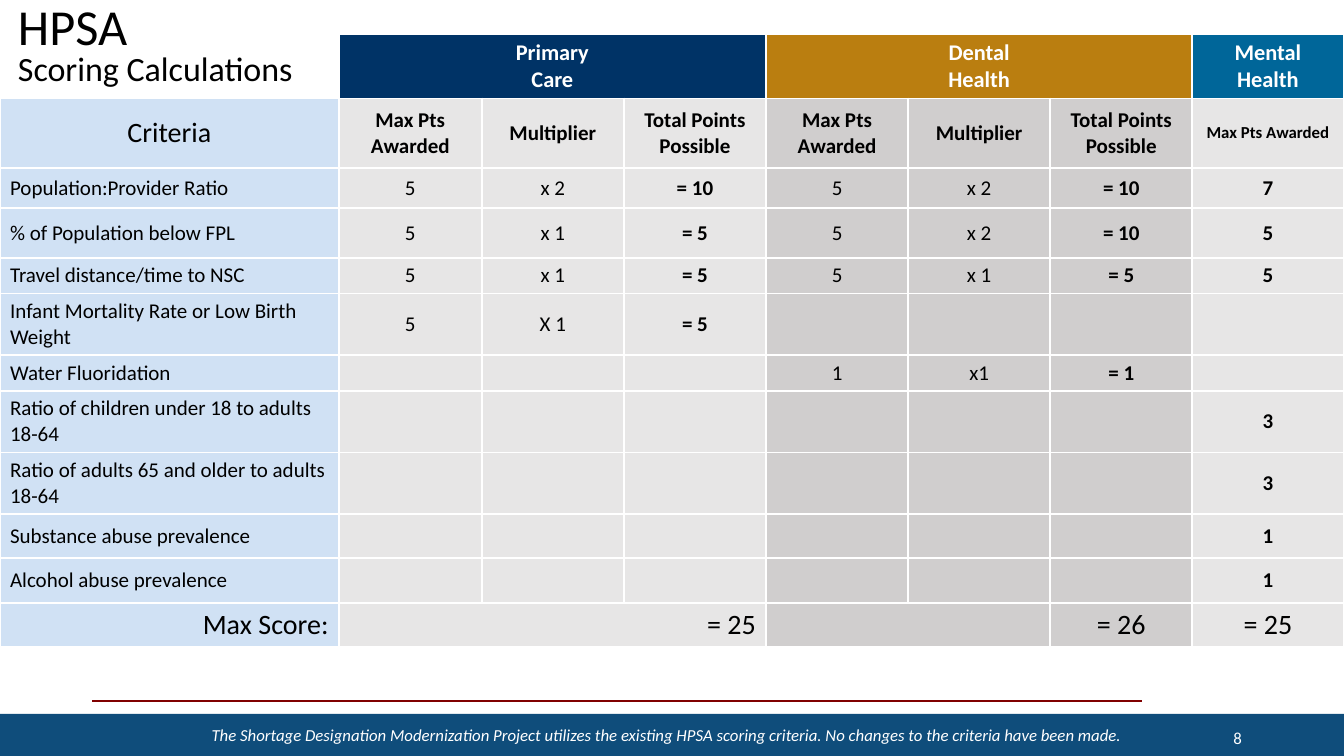
from dataclasses import dataclass

from lxml.etree import SubElement
from pptx import Presentation
from pptx.dml.color import RGBColor
from pptx.enum.shapes import MSO_CONNECTOR, MSO_SHAPE
from pptx.enum.text import MSO_ANCHOR, PP_ALIGN
from pptx.oxml import parse_xml
from pptx.oxml.ns import nsdecls, qn
from pptx.slide import Slide
from pptx.table import Table, _Cell
from pptx.text.text import _Run
from pptx.util import Inches, Pt


@dataclass(frozen=True)
class Theme:
    font: str = "Calibri"
    white: str = "FFFFFF"
    black: str = "000000"
    primary: str = "003366"
    dental: str = "BA7E10"
    mental: str = "006699"
    criteria: str = "D0E1F4"
    light: str = "E7E6E6"
    dark: str = "D0CECE"
    band: str = "0F4D7B"
    rule: str = "800000"
    title: float = 36
    subtitle: float = 24.3
    large: float = 20
    group: float = 16
    body: float = 15
    small: float = 12
    line: float = 1.5


@dataclass(frozen=True)
class Row:
    height: float
    texts: tuple[str, ...]
    size: float
    bold: tuple[int, ...] = ()


@dataclass(frozen=True)
class Label:
    left: float
    top: float
    width: float
    height: float
    text: str
    sizes: tuple[float, ...]
    color: str
    align: PP_ALIGN = PP_ALIGN.LEFT
    anchor: MSO_ANCHOR = MSO_ANCHOR.TOP
    italic: bool = False
    spacing: float = 1.0


T = Theme()
COLUMNS, ROWS = 160, 90  # slide grid, twelve units to the inch
TABLE_TOP = 4
WIDTHS = (40.32, 17.04, *[16.92] * 5, 18)
TOTALS = (3, 6, 7)
COLUMN_FILLS = (T.criteria, *[T.light] * 3, *[T.dark] * 3, T.light)
GROUP_FILLS = (T.white, *[T.primary] * 3, *[T.dental] * 3, T.mental)
SUBHEADS = ("Max Pts Awarded", "Multiplier", "Total Points Possible")
NONE = ("", "", "")


def criterion(height: float, name: str, primary: tuple[str, ...] = NONE,
              dental: tuple[str, ...] = NONE, mental: str = "") -> Row:
    return Row(height, (name, *primary, *dental, mental), T.body, TOTALS)


TABLE_ROWS = (
    Row(7.56, ("", "Primary\nCare", "", "", "Dental\nHealth", "", "", "Mental Health"),
        T.group, tuple(range(8))),
    Row(8.28, ("Criteria", *SUBHEADS, *SUBHEADS, SUBHEADS[0]), T.body, tuple(range(1, 8))),
    criterion(4.8, "Population:Provider Ratio", ("5", "x 2", "= 10"), ("5", "x 2", "= 10"), "7"),
    criterion(5.88, "% of Population below FPL", ("5", "x 1", "= 5"), ("5", "x 2", "= 10"), "5"),
    criterion(4.26, "Travel distance/time to NSC", ("5", "x 1", "= 5"), ("5", "x 1", "= 5"), "5"),
    criterion(7.32, "Infant Mortality Rate or Low Birth Weight", ("5", "X 1", "= 5")),
    criterion(4.26, "Water Fluoridation", dental=("1", "x1", "= 1")),
    criterion(7.32, "Ratio of children under 18 to adults 18-64", mental="3"),
    criterion(7.32, "Ratio of adults 65 and older to adults 18-64", mental="3"),
    criterion(5.28, "Substance abuse prevalence", mental="1"),
    criterion(5.28, "Alcohol abuse prevalence", mental="1"),
    Row(5.28, ("Max Score:", "= 25", "", "", "", "", "= 26", "= 25"), T.large),
)
LAST = len(TABLE_ROWS) - 1
MERGES = ((0, 1, 3), (0, 4, 6), (LAST, 1, 3), (LAST, 4, 5))  # row, first and last column

LABELS = (
    Label(0.96, 0.24, 41.04, 10.8, "HPSA\vScoring Calculations",
          (T.title, T.subtitle), T.black, spacing=0.8),
    Label(24, 85.68, 112, 4.32,
          "The Shortage Designation Modernization Project utilizes the existing HPSA "
          "scoring criteria. No changes to the criteria have been made.",
          (T.small,), T.white, italic=True),
    Label(113.04, 85.68, 36, 4.32, "8", (T.small,), T.white,
          PP_ALIGN.RIGHT, MSO_ANCHOR.MIDDLE),
)


def grid(units: float) -> int:
    return Inches(units / 12)


def rgb(color: str) -> RGBColor:
    return RGBColor.from_string(color)


def style_run(r: _Run, size: float, color: str, bold: bool = False, italic: bool = False) -> None:
    r.font.name, r.font.size = T.font, Pt(size)
    r.font.bold, r.font.italic = bold, italic
    r.font.color.rgb = rgb(color)


def add_label(s: Slide, label: Label) -> None:
    box = s.shapes.add_textbox(*map(grid, (label.left, label.top, label.width, label.height)))
    tf = box.text_frame
    tf.word_wrap, tf.vertical_anchor = True, label.anchor
    p = tf.paragraphs[0]
    p.text, p.alignment, p.line_spacing = label.text, label.align, label.spacing
    for r, size in zip(p.runs, label.sizes):
        style_run(r, size, label.color, italic=label.italic)


def add_footer(s: Slide) -> None:
    band = s.shapes.add_shape(MSO_SHAPE.RECTANGLE, 0, grid(85), grid(COLUMNS), grid(5))
    band.shadow.inherit = False
    band.fill.solid()
    band.fill.fore_color.rgb = rgb(T.band)
    band.line.fill.background()
    rule = s.shapes.add_connector(MSO_CONNECTOR.STRAIGHT, *map(grid, (11, 83.4, 136, 83.4)))
    rule.line.color.rgb, rule.line.width = rgb(T.rule), Pt(T.line)
    SubElement(rule._element.spPr, qn("a:effectLst"))


def set_borders(cell: _Cell) -> None:
    tc_pr = cell._tc.get_or_add_tcPr()
    for i, side in enumerate("LRTB"):
        tc_pr.insert(i, parse_xml(
            f'<a:ln{side} {nsdecls("a")} w="{Pt(T.line)}"><a:solidFill>'
            f'<a:srgbClr val="{T.white}"/></a:solidFill></a:ln{side}>'))


def alignment(i: int, j: int) -> PP_ALIGN:
    if i == LAST and j <= 1:
        return PP_ALIGN.RIGHT
    return PP_ALIGN.LEFT if j == 0 and i > 1 else PP_ALIGN.CENTER


def text_size(i: int, j: int) -> float:
    if i == 1 and j in (0, 7):
        return T.large if j == 0 else T.small
    return TABLE_ROWS[i].size


def fill_cell(table: Table, i: int, j: int) -> None:
    row, cell = TABLE_ROWS[i], table.cell(i, j)
    top = i == 0 or (i == LAST and j == 0)
    cell.vertical_anchor = MSO_ANCHOR.TOP if top else MSO_ANCHOR.MIDDLE
    cell.fill.solid()
    cell.fill.fore_color.rgb = rgb((GROUP_FILLS if i == 0 else COLUMN_FILLS)[j])
    set_borders(cell)
    cell.text_frame.text = row.texts[j]
    for p in cell.text_frame.paragraphs:
        p.alignment = alignment(i, j)
        for r in p.runs:
            style_run(r, text_size(i, j), T.white if i == 0 else T.black, j in row.bold)
        if not p.runs:  # keeps empty cells from stretching their row
            p._p.get_or_add_endParaRPr().set("sz", str(int(T.small * 100)))


def add_score_table(s: Slide) -> None:
    frame = s.shapes.add_table(len(TABLE_ROWS), len(WIDTHS), 0, grid(TABLE_TOP),
                               grid(sum(WIDTHS)), grid(sum(row.height for row in TABLE_ROWS)))
    table = frame.table
    table.first_row = table.horz_banding = False
    for column, width in zip(table.columns, WIDTHS):
        column.width = grid(width)
    for i, row in enumerate(TABLE_ROWS):
        table.rows[i].height = grid(row.height)
        for j in range(len(WIDTHS)):
            fill_cell(table, i, j)
    for i, first, last in MERGES:
        table.cell(i, first).merge(table.cell(i, last))


def main() -> None:
    prs = Presentation()
    prs.slide_width, prs.slide_height = grid(COLUMNS), grid(ROWS)
    s = prs.slides.add_slide(prs.slide_layouts[6])
    # Footer band and rule, then the table, then the text over them
    add_footer(s)
    add_score_table(s)
    for label in LABELS:
        add_label(s, label)
    prs.save("out.pptx")


if __name__ == "__main__":
    main()
